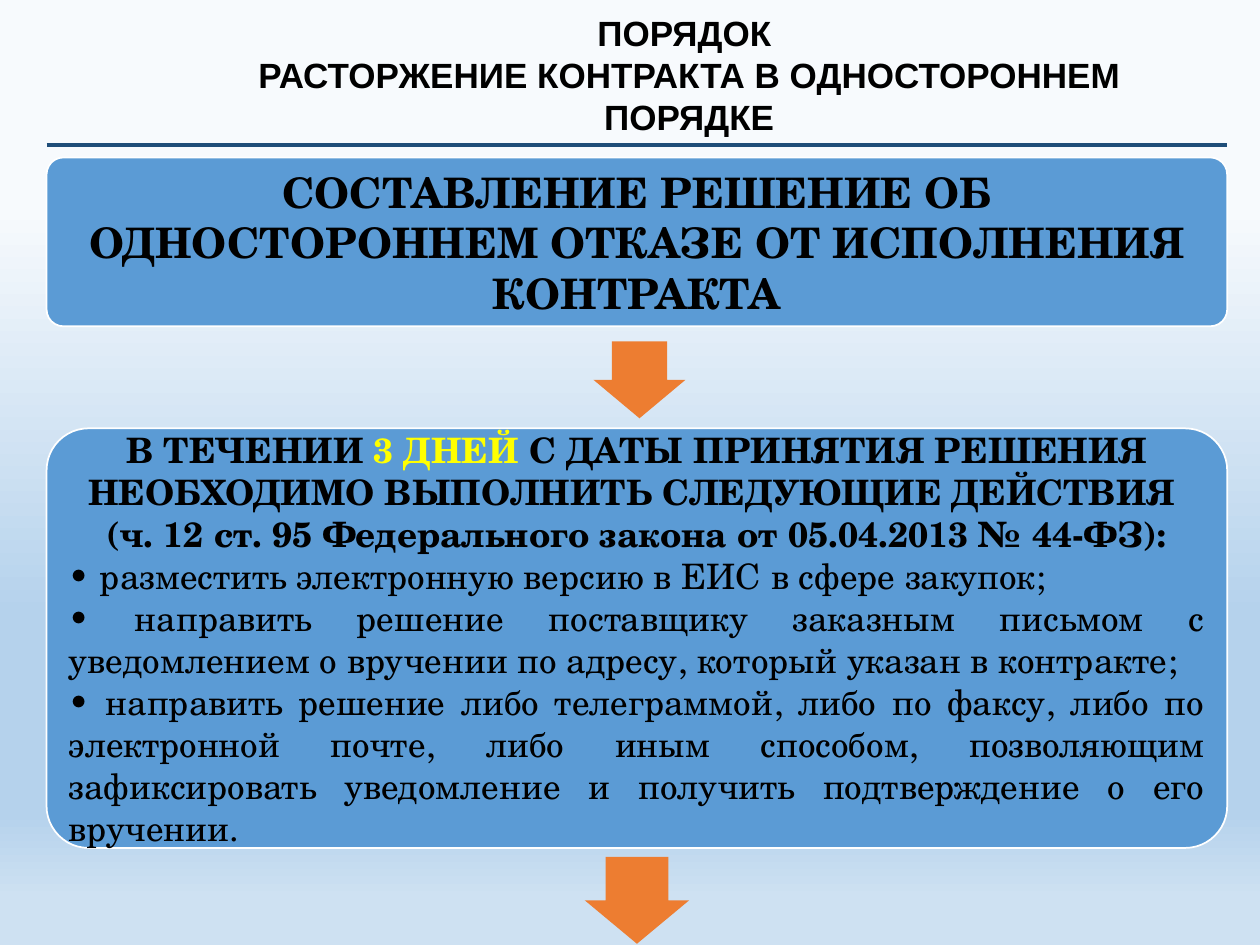
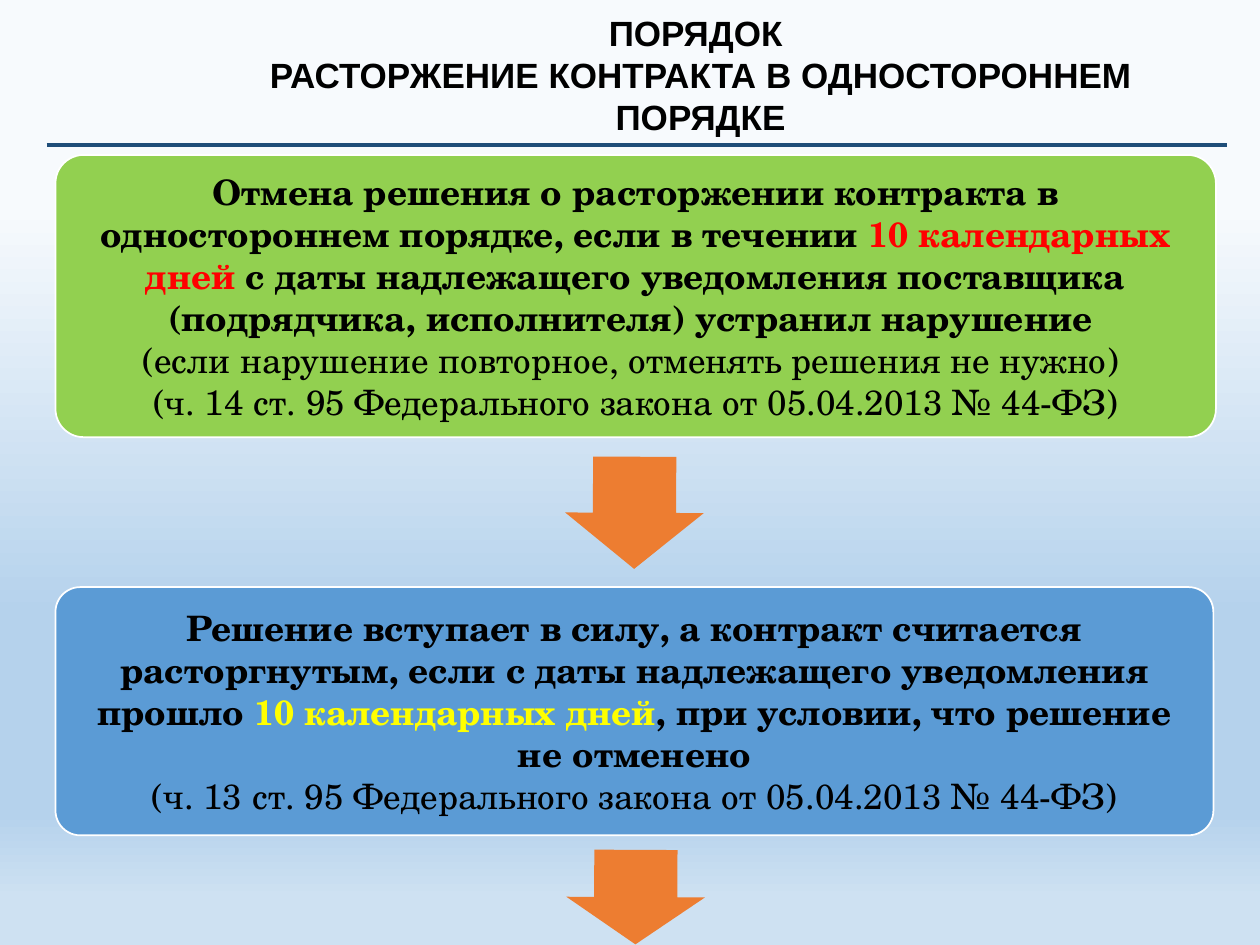
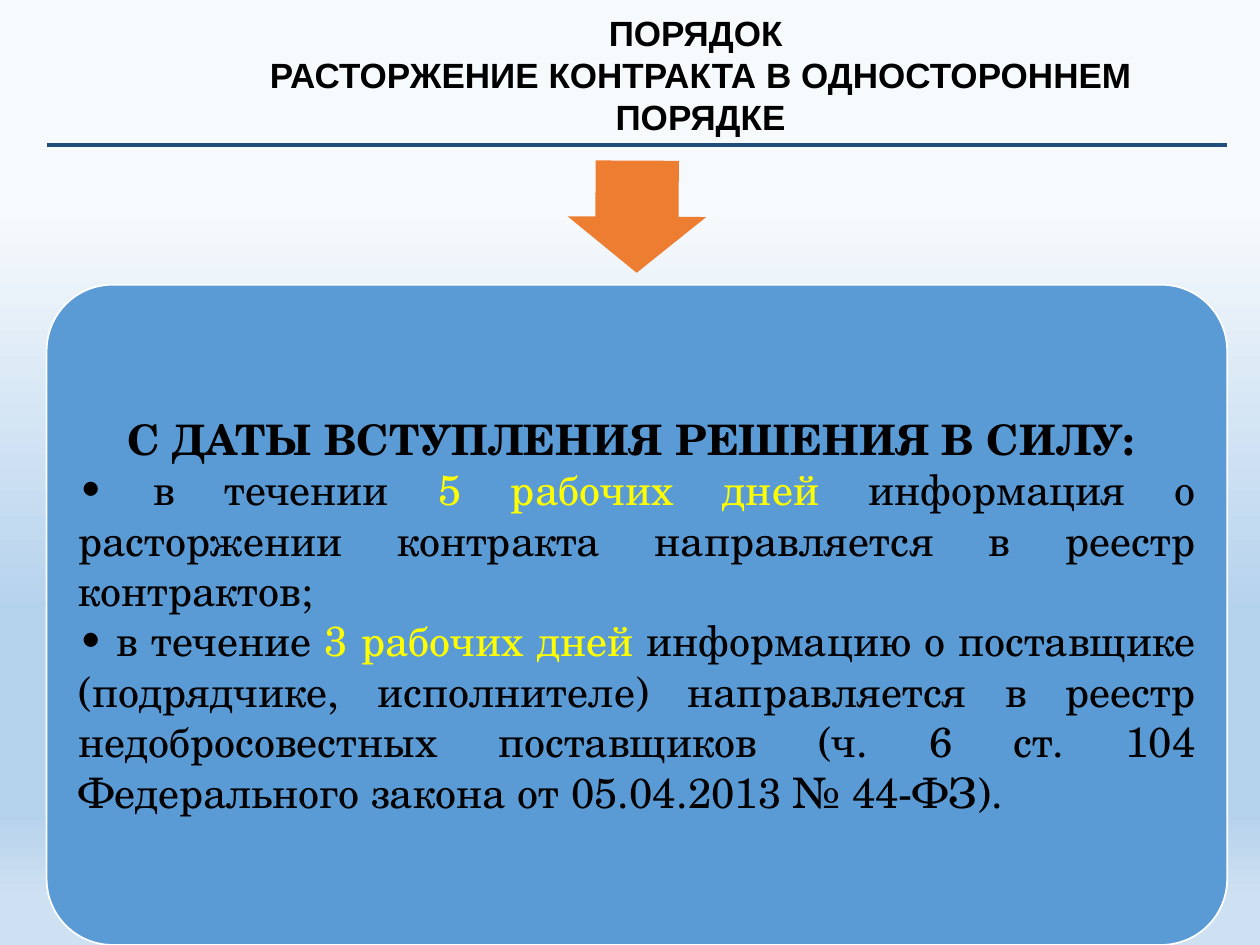
"""Three slides on the one-sided termination of a contract."""
from copy import deepcopy

from lxml import etree
from pptx import Presentation
from pptx.dml.color import RGBColor
from pptx.enum import shapes, text
from pptx.oxml.ns import qn
from pptx.util import Inches, Pt

BLACK = RGBColor(0x00, 0x00, 0x00)
WHITE = RGBColor(0xFF, 0xFF, 0xFF)
YELLOW = RGBColor(0xFF, 0xFF, 0x00)
RED = RGBColor(0xFF, 0x00, 0x00)
NAVY = RGBColor(0x1F, 0x4E, 0x79)
BLUE = RGBColor(0x5B, 0x9B, 0xD5)
GREEN = RGBColor(0x92, 0xD0, 0x50)
ORANGE = RGBColor(0xED, 0x7D, 0x31)
PALE = RGBColor(0xF7, 0xFA, 0xFD)
SKY = RGBColor(0xB5, 0xD2, 0xEC)
MIST = RGBColor(0xCE, 0xE1, 0xF2)

BACKDROP = [(0.22, PALE), (0.65, SKY), (0.86, SKY), (0.95, MIST)]
TITLE_FONT = "Arial"
BODY_FONT = "TeX Gyre Schola"
LEFT, WIDTH = 0.37, 9.37
CENTER = text.PP_ALIGN.CENTER
JUSTIFY = text.PP_ALIGN.JUSTIFY


def write(frame, *spans, size=20, font=BODY_FONT, bold=False, align=CENTER):
    """Add a paragraph of spans, each a string or a (string, colour) pair."""
    first = frame.paragraphs[0]
    para = frame.add_paragraph() if first.runs else first
    para.alignment = align
    for item in spans:
        words, color = (item, BLACK) if isinstance(item, str) else item
        span = para.add_run()
        span.text = words
        span.font.name = font
        span.font.size = Pt(size)
        span.font.bold = bold
        span.font.color.rgb = color


class Slides:
    """The shared style and the current slide."""

    def __init__(self):
        """Start a deck with the gradient on its master."""
        self.deck = Presentation()
        self.deck.slide_width, self.deck.slide_height = Inches(10), Inches(7.5)
        self.page = None
        master = self.deck.slide_master
        fill = master.background.fill
        fill.gradient()
        fill.gradient_angle = 270
        stops = master.element.find(".//" + qn("a:gsLst"))
        while len(stops) < len(BACKDROP):
            stops.append(deepcopy(stops[0]))
        for stop, (position, color) in zip(fill.gradient_stops, BACKDROP):
            stop.position = position
            stop.color.rgb = color

    def new_page(self, title_left):
        """Open a slide with the title and the rule below it."""
        self.page = self.deck.slides.add_slide(self.deck.slide_layouts[6])
        self.rule(1.15)
        box = self.page.shapes.add_textbox(
            Inches(title_left), Inches(0.04), Inches(7.72), Inches(1.11))
        frame = box.text_frame
        frame.word_wrap = True
        frame.auto_size = text.MSO_AUTO_SIZE.SHAPE_TO_FIT_TEXT
        for line in ("ПОРЯДОК ", "РАСТОРЖЕНИЕ КОНТРАКТА В ОДНОСТОРОННЕМ ПОРЯДКЕ"):
            write(frame, line, font=TITLE_FONT, bold=True)

    def rule(self, top):
        """Draw a line across the slide."""
        line = self.page.shapes.add_connector(
            shapes.MSO_CONNECTOR.STRAIGHT, Inches(LEFT), Inches(top),
            Inches(LEFT + WIDTH), Inches(top))
        line.line.color.rgb = NAVY
        line.line.width = Pt(2)
        properties = line.element.find(qn("p:spPr"))
        etree.SubElement(properties, qn("a:effectLst"))

    def shape(self, kind, left, top, width, height, fill):
        """Add a filled preset shape without a shadow."""
        shape = self.page.shapes.add_shape(
            kind, Inches(left), Inches(top), Inches(width), Inches(height))
        shape.shadow.inherit = False
        shape.fill.solid()
        shape.fill.fore_color.rgb = fill
        return shape

    def card(self, top, height, left=LEFT, width=WIDTH, fill=BLUE, inset=0.08):
        """Add a rounded card and return its text frame."""
        card = self.shape(shapes.MSO_SHAPE.ROUNDED_RECTANGLE,
                          left, top, width, height, fill)
        card.adjustments[0] = 0.1
        card.line.color.rgb = WHITE
        card.line.width = Pt(1)
        frame = card.text_frame
        frame.word_wrap = True
        frame.vertical_anchor = text.MSO_ANCHOR.MIDDLE
        frame.margin_left = frame.margin_right = Inches(inset)
        frame.margin_top = frame.margin_bottom = Inches(inset)
        return frame

    def arrow(self, left, top, length, breadth, rotation=90.3):
        """Add an arrow turned to point down."""
        arrow = self.shape(shapes.MSO_SHAPE.RIGHT_ARROW,
                           left, top, length, breadth, ORANGE)
        arrow.adjustments[0], arrow.adjustments[1] = 0.6, 0.5
        arrow.rotation = rotation
        arrow.line.fill.background()


def decision_page(slides):
    """Build the slide on the decision and the first three days."""
    slides.new_page(1.61)
    decision = slides.card(1.25, 1.34, inset=0.1)
    write(decision, "СОСТАВЛЕНИЕ РЕШЕНИЕ ОБ ОДНОСТОРОННЕМ ОТКАЗЕ "
          "ОТ ИСПОЛНЕНИЯ КОНТРАКТА", size=24, bold=True)
    slides.arrow(4.77, 2.65, 0.61, 0.73, rotation=90)
    actions = slides.card(3.4, 3.33)
    write(actions, "В ТЕЧЕНИИ ", ("3 ДНЕЙ ", YELLOW),
          "С ДАТЫ ПРИНЯТИЯ РЕШЕНИЯ НЕОБХОДИМО ВЫПОЛНИТЬ СЛЕДУЮЩИЕ ДЕЙСТВИЯ ",
          bold=True)
    write(actions, "(ч. 12 ст. 95 Федерального закона от 05.04.2013 № 44-ФЗ):",
          bold=True)
    for action in (
            "• разместить электронную версию в ЕИС в сфере закупок; ",
            "• направить решение поставщику заказным письмом с уведомлением "
            "о вручении по адресу, который указан в контракте;",
            "• направить решение либо телеграммой, либо по факсу, либо по "
            "электронной почте, либо иным способом, позволяющим зафиксировать "
            "уведомление и получить подтверждение о его вручении."):
        write(actions, action, align=JUSTIFY)
    slides.arrow(4.71, 6.73, 0.69, 0.83, rotation=90)


def outcome_page(slides):
    """Build the slide on cancelling the decision or its entry into force."""
    slides.new_page(1.7)
    cancelled = slides.card(1.23, 2.24, left=0.44, width=9.21, fill=GREEN)
    write(cancelled, "Отмена решения о расторжении контракта в одностороннем "
          "порядке, если в течении ", ("10 календарных дней", RED),
          " с даты надлежащего уведомления поставщика (подрядчика, "
          "исполнителя) устранил нарушение ", bold=True)
    write(cancelled, "(если нарушение повторное, отменять решения не нужно) ")
    write(cancelled, "(ч. 14 ст. 95 Федерального закона от 05.04.2013 № 44-ФЗ)")
    slides.arrow(4.59, 3.52, 0.89, 1.1)
    in_force = slides.card(4.66, 1.97, left=0.44, width=9.19)
    write(in_force, "Решение вступает в силу, а контракт считается "
          "расторгнутым, если с даты надлежащего уведомления прошло ",
          ("10 календарных дней", YELLOW),
          ", при условии, что решение не отменено", bold=True)
    write(in_force, "(ч. 13 ст. 95 Федерального закона от 05.04.2013 № 44-ФЗ)")
    slides.arrow(4.67, 6.57, 0.75, 1.1)


def registry_page(slides):
    """Build the slide on the entries in the registries."""
    slides.new_page(1.7)
    registries = slides.card(2.26, 5.24, inset=0.1)
    write(registries, "С ДАТЫ ВСТУПЛЕНИЯ РЕШЕНИЯ В СИЛУ: ", size=24, bold=True)
    write(registries, "• в течении ", ("5 рабочих дней ", YELLOW),
          "информация о расторжении контракта направляется в реестр "
          "контрактов;", size=24, align=JUSTIFY)
    write(registries, "• в течение ", ("3 рабочих дней ", YELLOW),
          "информацию о поставщике (подрядчике, исполнителе) направляется в "
          "реестр недобросовестных поставщиков (ч. 6 ст. 104 Федерального "
          "закона от 05.04.2013 № 44-ФЗ).", size=24, align=JUSTIFY)
    slides.arrow(4.61, 1.17, 0.89, 1.1)


def main():
    """Build and save the deck."""
    slides = Slides()
    decision_page(slides)
    outcome_page(slides)
    registry_page(slides)
    slides.deck.save("out.pptx")


if __name__ == "__main__":
    main()
